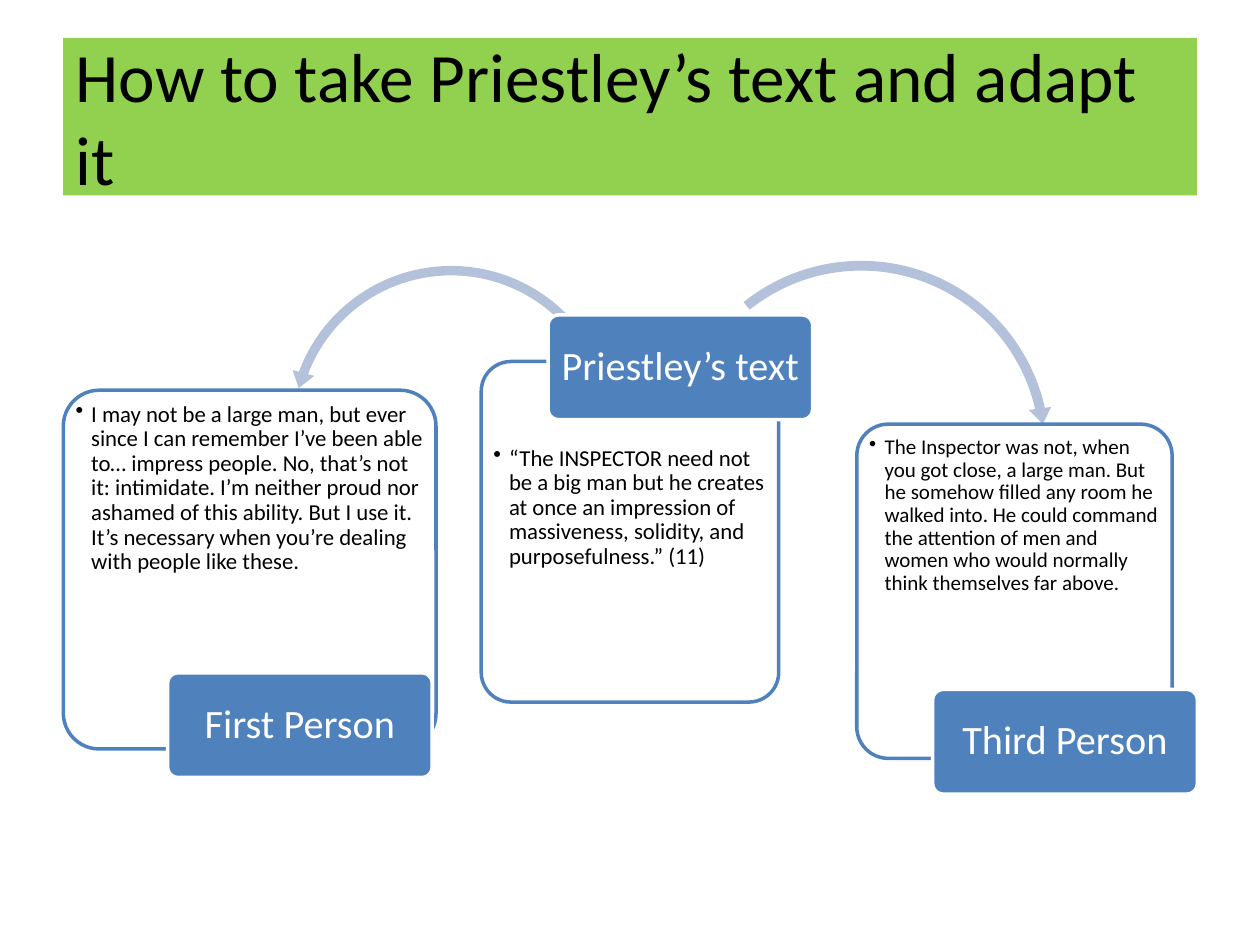
"""Build a slide showing a play text adapted into first and third person."""
from lxml import etree
from pptx import Presentation
from pptx import util as u
from pptx.dml.color import RGBColor
from pptx.enum import shapes, text
from pptx.oxml import ns

FONT = "Calibri"
GREEN = RGBColor(0x92, 0xD0, 0x50)
BLUE = RGBColor(0x4F, 0x81, 0xBD)
PALE_BLUE = RGBColor(0xB3, 0xC1, 0xDB)
WHITE = RGBColor(0xFF, 0xFF, 0xFF)
BLACK = RGBColor(0, 0, 0)

TITLE = "How to take Priestley’s text and adapt it"
TITLE_BOX = (36, 21.6, 648, 90)
LABEL_SIZE = (151.2, 59.8)
INSET = 4.7
LABEL_INSET = 1.8
BULLET_INDENT = 8.9

ARROWS = {
    "left": dict(kind=shapes.MSO_SHAPE.LEFT_CIRCULAR_ARROW,
                 box=(161.3, 148.3, 193, 193), rotation=180,
                 adjustments=(0.028, 3.453, 12.332, 81.368, 0.033)),
    "right": dict(kind=shapes.MSO_SHAPE.CIRCULAR_ARROW,
                  box=(380.9, 145.4, 222.5, 222.5), rotation=3.3,
                  adjustments=(0.025, 2.972, 206.338, 136.82, 0.029)),
}
STAGES = [
    dict(label="First Person", label_at=(95.8, 384.5), arrow="left",
         panel=(36.2, 223, 213, 205), text_drop=INSET, size=13,
         body="I may not be a large man, but ever since I can remember I’ve been able to… "
              "impress people. No, that’s not it: intimidate. I’m neither proud nor ashamed "
              "of this ability. But I use it. It’s necessary when you’re dealing with people "
              "like these."),
    dict(label="Priestley’s text", label_at=(313.2, 180), arrow="right",
         panel=(275, 206.6, 170, 194.6), text_drop=46.2, size=13,
         body="“The INSPECTOR need not be a big man but he creates at once an impression of "
              "massiveness, solidity, and purposefulness.” (11)"),
    dict(label="Third Person", label_at=(533, 394), arrow=None,
         panel=(489.6, 242.4, 180.2, 191), text_drop=INSET, size=12,
         body="The Inspector was not, when you got close, a large man. But he somehow filled "
              "any room he walked into. He could command the attention of men and women who "
              "would normally think themselves far above."),
]


def points(values):
    return [u.Pt(value) for value in values]


def format_paragraph(paragraph, size, color, align):
    paragraph.alignment = align
    paragraph.font.name = FONT
    paragraph.font.size = u.Pt(size)
    paragraph.font.color.rgb = color


def add_title(slide):
    title = slide.shapes.title
    title.left, title.top, title.width, title.height = points(TITLE_BOX)
    title.fill.solid()
    title.fill.fore_color.rgb = GREEN
    frame = title.text_frame
    frame.text = TITLE
    frame.word_wrap = True
    frame.auto_size = text.MSO_AUTO_SIZE.NONE
    frame.vertical_anchor = text.MSO_ANCHOR.MIDDLE
    format_paragraph(frame.paragraphs[0], 39.6, BLACK, text.PP_ALIGN.LEFT)


def add_figure(slide, kind, box, fill, line=None, adjustments=(0.1,), rotation=0):
    shape = slide.shapes.add_shape(kind, *points(box))
    shape.shadow.inherit = False
    shape.rotation = rotation
    for index, value in enumerate(adjustments):
        shape.adjustments[index] = value
    shape.fill.solid()
    shape.fill.fore_color.rgb = fill
    if line is None:
        shape.line.fill.background()
    else:
        shape.line.color.rgb = line
        shape.line.width = u.Pt(2)


def add_text(slide, box, content, size, color, align, anchor, side_margin):
    frame = slide.shapes.add_textbox(*points(box)).text_frame
    frame.word_wrap = True
    frame.vertical_anchor = anchor
    frame.margin_left = frame.margin_right = u.Pt(side_margin)
    frame.margin_top = frame.margin_bottom = u.Pt(2.3)
    paragraph = frame.paragraphs[0]
    paragraph.text = content
    paragraph.line_spacing = 0.9
    format_paragraph(paragraph, size, color, align)
    return paragraph


def add_bullet(paragraph):
    properties = paragraph._p.get_or_add_pPr()
    properties.set("marL", str(u.Pt(BULLET_INDENT)))
    properties.set("indent", str(-u.Pt(BULLET_INDENT)))
    bullet = etree.Element(ns.qn("a:buChar"), char="•")
    properties.find(ns.qn("a:lnSpc")).addnext(bullet)


def add_stage(slide, stage):
    rounded = shapes.MSO_SHAPE.ROUNDED_RECTANGLE
    left, top, width, height = stage["panel"]
    add_figure(slide, rounded, stage["panel"], WHITE, BLUE)
    body_box = (left + INSET, top + stage["text_drop"], width - 2 * INSET, height * 0.74)
    add_bullet(add_text(slide, body_box, stage["body"], stage["size"], BLACK,
                        text.PP_ALIGN.LEFT, text.MSO_ANCHOR.TOP, 2.3))
    if stage["arrow"]:
        add_figure(slide, fill=PALE_BLUE, **ARROWS[stage["arrow"]])
    left, top = stage["label_at"]
    width, height = LABEL_SIZE
    add_figure(slide, rounded, (left, top, width, height), BLUE, WHITE)
    label_box = (left + LABEL_INSET, top + LABEL_INSET,
                 width - 2 * LABEL_INSET, height - 2 * LABEL_INSET)
    add_text(slide, label_box, stage["label"], 23, WHITE,
             text.PP_ALIGN.CENTER, text.MSO_ANCHOR.MIDDLE, 3.4)


def main():
    presentation = Presentation()
    presentation.slide_width, presentation.slide_height = u.Pt(720), u.Pt(540)
    slide = presentation.slides.add_slide(presentation.slide_layouts[5])
    add_title(slide)
    for stage in STAGES:
        add_stage(slide, stage)
    presentation.save("out.pptx")


if __name__ == "__main__":
    main()
